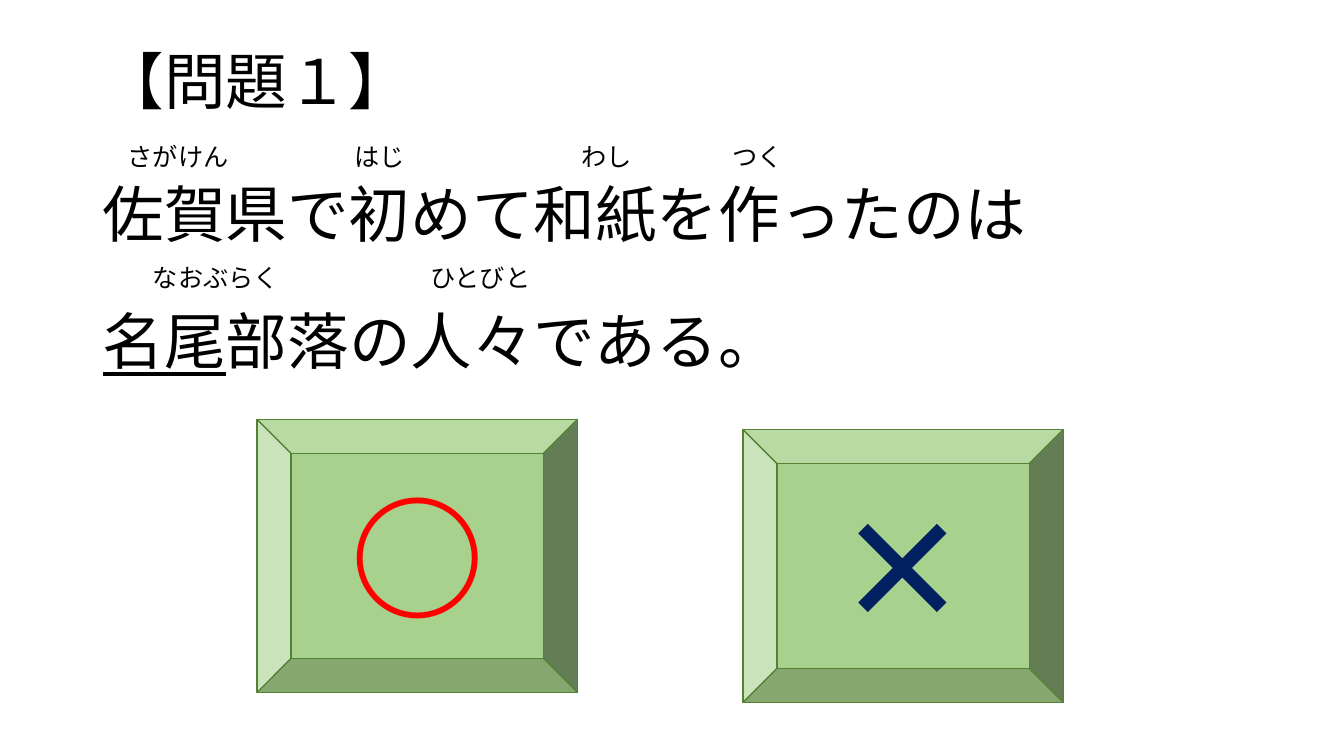
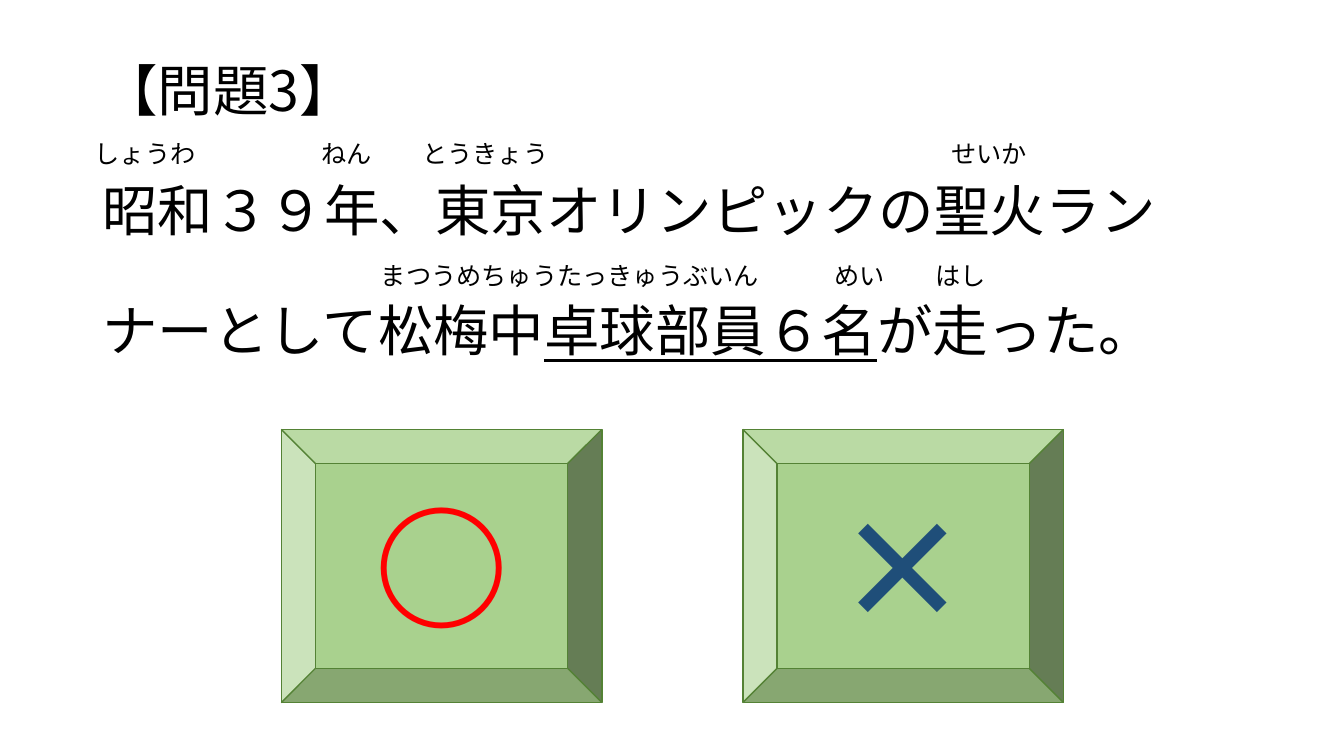
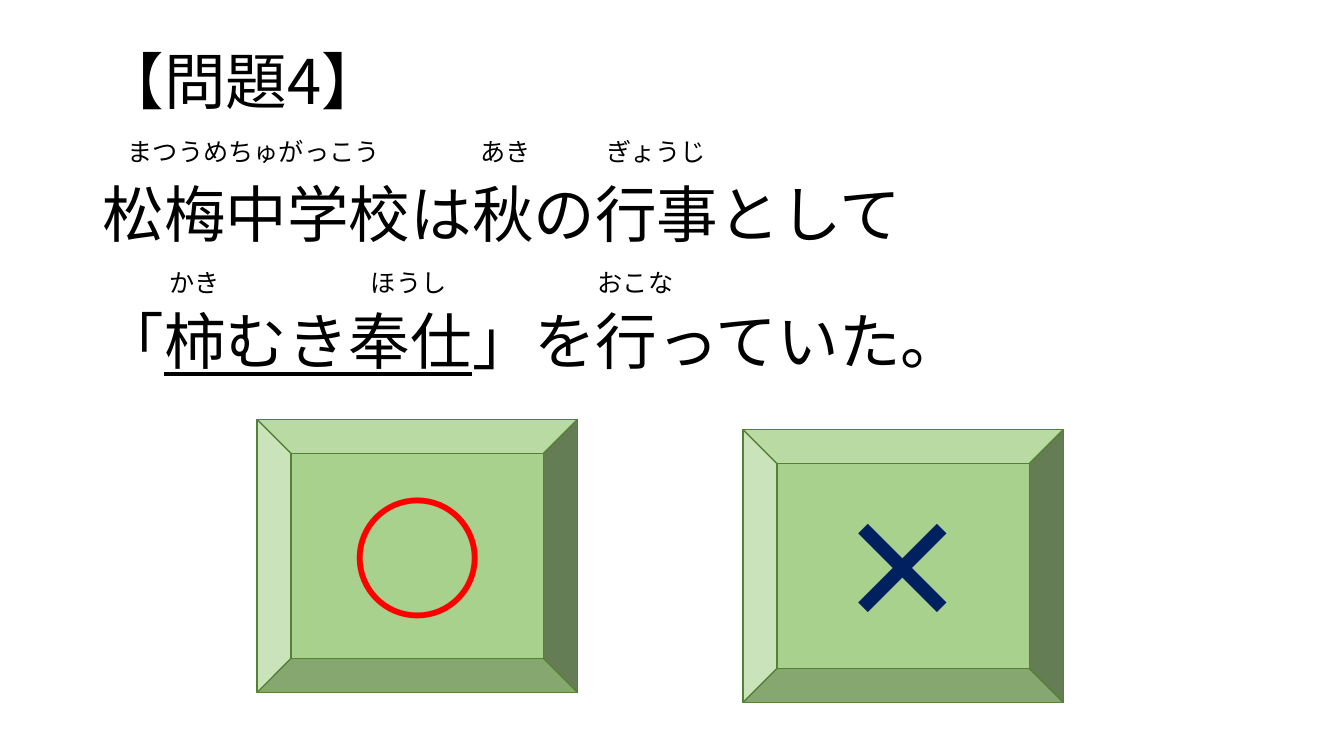
from dataclasses import dataclass

from lxml import etree
from pptx import Presentation
from pptx.dml.color import RGBColor
from pptx.enum.shapes import MSO_SHAPE
from pptx.enum.text import MSO_ANCHOR, PP_ALIGN
from pptx.oxml.ns import qn
from pptx.util import Pt

BEVEL = MSO_SHAPE.BEVEL
TOP, MIDDLE = MSO_ANCHOR.TOP, MSO_ANCHOR.MIDDLE
CENTER = PP_ALIGN.CENTER

BLACK = RGBColor(0x00, 0x00, 0x00)
RED = RGBColor(0xFF, 0x00, 0x00)
NAVY = RGBColor(0x00, 0x20, 0x60)
STEEL = RGBColor(0x1F, 0x4E, 0x79)
GREEN = RGBColor(0xA9, 0xD1, 0x8E)
DARK_GREEN = RGBColor(0x54, 0x82, 0x35)

FONT = "Noto Sans CJK JP"
READING_SIZE = 18
MARK_SIZE = 96
QUESTION_BOX = (66.2, 28.8, 828, 241.2)
READING_WIDTH, READING_HEIGHT = 795.6, 28.8
BUTTON_WIDTH, BUTTON_HEIGHT = 229, 195.1
CROSS_PLACE = (530.6, 306.7)


@dataclass
class QuestionStyle:
    size: float
    line_height: float
    heading_gap: float
    line_gap: float
    circle_place: tuple
    cross_color: RGBColor


LARGE = QuestionStyle(44, 51, 44, 40, (183.6, 299.5), NAVY)
COMPACT = QuestionStyle(39.6, 55.4, 30.4, 30.4, (200.9, 306.7), STEEL)

# Each line is a list of (text, underlined) spans.
# Each reading row is (left, top, [(column in characters, reading), ...]).
QUESTIONS = [
    (LARGE,
     [[("【問題１】", False)],
      [("佐賀県で初めて和紙を作ったのは", False)],
      [("名尾", True), ("部落の人々である。", False)]],
     [(66.2, 97.2, [(1, "さがけん"), (10, "はじ"), (19, "わし"), (25, "つく")]),
      (66.2, 183.6, [(2, "なおぶらく"), (13, "ひとびと")])]),
    (COMPACT,
     [[("【問題3】", False)],
      [("昭和３９年、東京オリンピックの聖火ラン", False)],
      [("ナーとして松梅中", False), ("卓球部員６名", True), ("が走った。", False)]],
     [(42.5, 95, [(1, "しょうわ"), (10, "ねん"), (14, "とうきょう"), (35, "せいか")]),
      (67, 182.2, [(11, "まつうめちゅうたっきゅうぶいん"), (29, "めい"), (33, "はし")])]),
    (LARGE,
     [[("【問題4】", False)],
      [("松梅中学校は秋の行事として", False)],
      [("「", False), ("柿むき奉仕", True), ("」を行っていた。", False)]],
     [(66.2, 93.6, [(1, "まつうめちゅがっこう"), (15, "あき"), (20, "ぎょうじ")]),
      (59.8, 187.2, [(3, "かき"), (11, "ほうし"), (20, "おこな")])]),
]


def add_span(para, text, size, color=BLACK, bold=False, underline=False):
    span = para.add_run()
    span.text = text
    font = span.font
    font.name, font.size = FONT, Pt(size)
    font.bold, font.underline = bold, underline
    font.color.rgb = color
    latin = font._element.find(qn("a:latin"))
    east_asian = etree.Element(qn("a:ea"), typeface=FONT)
    latin.addnext(east_asian)


def add_text_frame(page, left, top, width, height):
    box = page.shapes.add_textbox(Pt(left), Pt(top), Pt(width), Pt(height))
    frame = box.text_frame
    frame.word_wrap = True
    frame.vertical_anchor = TOP
    return frame


def add_question(page, box, lines, style):
    frame = add_text_frame(page, *box)
    gaps = [0, style.heading_gap, style.line_gap]
    for index, (spans, gap) in enumerate(zip(lines, gaps)):
        para = frame.add_paragraph() if index else frame.paragraphs[0]
        para.line_spacing = Pt(style.line_height)
        para.space_before = Pt(gap)
        for text, underlined in spans:
            add_span(para, text, style.size, underline=underlined)


def add_readings(page, left, top, readings):
    """Set the readings above their characters with one tab stop each."""
    frame = add_text_frame(page, left, top, READING_WIDTH, READING_HEIGHT)
    para = frame.paragraphs[0]
    tabs = etree.SubElement(para._p.get_or_add_pPr(), qn("a:tabLst"))
    for column, reading in readings:
        position = Pt(column * READING_SIZE)
        etree.SubElement(tabs, qn("a:tab"), pos=str(int(position)), algn="l")
        add_span(para, "\t" + reading, READING_SIZE)


def add_answer_button(page, place, mark, color):
    left, top = place
    button = page.shapes.add_shape(
        BEVEL, Pt(left), Pt(top), Pt(BUTTON_WIDTH), Pt(BUTTON_HEIGHT))
    button.shadow.inherit = False
    button.fill.solid()
    button.fill.fore_color.rgb = GREEN
    button.line.color.rgb = DARK_GREEN
    button.line.width = Pt(1)
    frame = button.text_frame
    frame.vertical_anchor = MIDDLE
    para = frame.paragraphs[0]
    para.alignment = CENTER
    add_span(para, mark, MARK_SIZE, color, bold=True)


def add_question_page(deck, style, lines, reading_rows):
    page = deck.slides.add_slide(deck.slide_layouts[6])
    add_question(page, QUESTION_BOX, lines, style)
    add_answer_button(page, style.circle_place, "○", RED)
    add_answer_button(page, CROSS_PLACE, "×", style.cross_color)
    for left, top, readings in reading_rows:
        add_readings(page, left, top, readings)


def main():
    deck = Presentation()
    deck.slide_width, deck.slide_height = Pt(960), Pt(540)
    for style, lines, reading_rows in QUESTIONS:
        add_question_page(deck, style, lines, reading_rows)
    deck.save("out.pptx")


if __name__ == "__main__":
    main()
